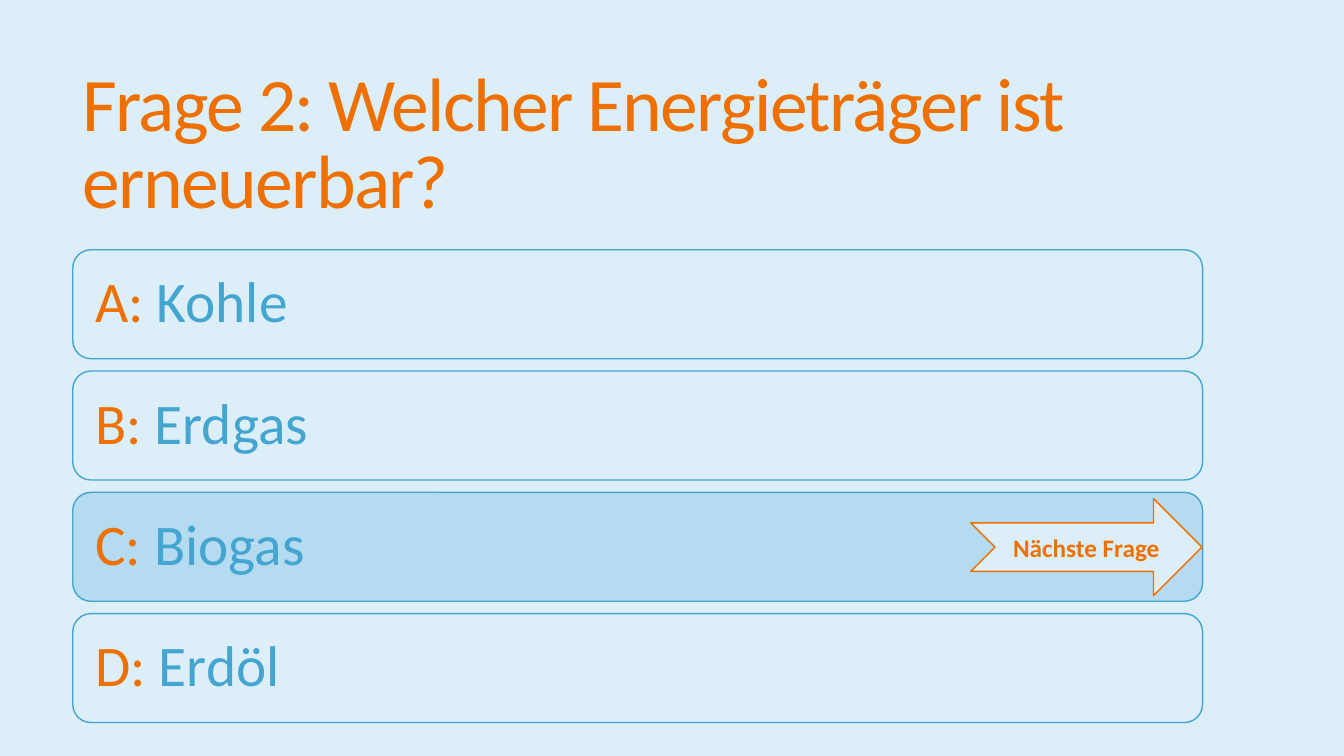
from pptx import Presentation
from pptx.dml.color import RGBColor
from pptx.enum.shapes import MSO_SHAPE
from pptx.enum.text import MSO_ANCHOR, PP_ALIGN
from pptx.util import Pt

ROUNDED = MSO_SHAPE.ROUNDED_RECTANGLE
NOTCHED_ARROW = MSO_SHAPE.NOTCHED_RIGHT_ARROW
MIDDLE = MSO_ANCHOR.MIDDLE
LEFT, CENTER = PP_ALIGN.LEFT, PP_ALIGN.CENTER

PALE_BLUE = RGBColor(0xDC, 0xEE, 0xF8)
HIGHLIGHT = RGBColor(0xB5, 0xDB, 0xF0)
BLUE = RGBColor(0x44, 0xA5, 0xD0)
ORANGE = RGBColor(0xED, 0x70, 0x00)

MARGIN_LEFT = 52
ANSWER_TOP, ANSWER_PITCH = 178.4, 86.63
ANSWER_WIDTH, ANSWER_HEIGHT = 807, 77.8
ANSWERS = [("A: ", "Kohle"), ("B: ", "Erdgas"), ("C: ", "Biogas"), ("D: ", "Erdöl")]
CORRECT = "Biogas"


def add_span(para, text, size, color, bold=False):
    span = para.add_run()
    span.text = text
    span.font.name = "Calibri"
    span.font.size = Pt(size)
    span.font.bold = bold
    span.font.color.rgb = color
    return span


def add_outlined(kind, left, top, width, height, fill, line):
    box = page.shapes.add_shape(kind, Pt(left), Pt(top), Pt(width), Pt(height))
    box.shadow.inherit = False
    box.fill.solid()
    box.fill.fore_color.rgb = fill
    box.line.color.rgb = line
    box.line.width = Pt(1)
    box.text_frame.word_wrap = True
    box.text_frame.vertical_anchor = MIDDLE
    return box


deck = Presentation()
deck.slide_width, deck.slide_height = Pt(960), Pt(540)
page = deck.slides.add_slide(deck.slide_layouts[6])
page.background.fill.solid()
page.background.fill.fore_color.rgb = PALE_BLUE

# Question
title = page.shapes.add_textbox(Pt(MARGIN_LEFT), Pt(39.6), Pt(896.4), Pt(130.3))
title.text_frame.word_wrap = True
title.text_frame.vertical_anchor = MIDDLE
para = title.text_frame.paragraphs[0]
para.line_spacing = 0.85
span = add_span(para, "Frage 2: Welcher Energieträger ist erneuerbar?", 54, ORANGE)
span.font._element.set("spc", "-120")

# Answers
for row, (letter, answer) in enumerate(ANSWERS):
    fill = HIGHLIGHT if answer == CORRECT else PALE_BLUE
    box = add_outlined(ROUNDED, MARGIN_LEFT, ANSWER_TOP + row * ANSWER_PITCH,
                       ANSWER_WIDTH, ANSWER_HEIGHT, fill, BLUE)
    frame = box.text_frame
    frame.margin_left = frame.margin_right = Pt(12.2)
    para = frame.paragraphs[0]
    para.alignment = LEFT
    para.line_spacing = 0.9
    add_span(para, letter, 41, ORANGE)
    add_span(para, answer, 41, BLUE)

# Arrow to the next question
arrow = add_outlined(NOTCHED_ARROW, 693.4, 356.2, 165.2, 69.3, PALE_BLUE, ORANGE)
para = arrow.text_frame.paragraphs[0]
para.alignment = CENTER
add_span(para, "Nächste Frage", 18, ORANGE, bold=True)

deck.save("out.pptx")
